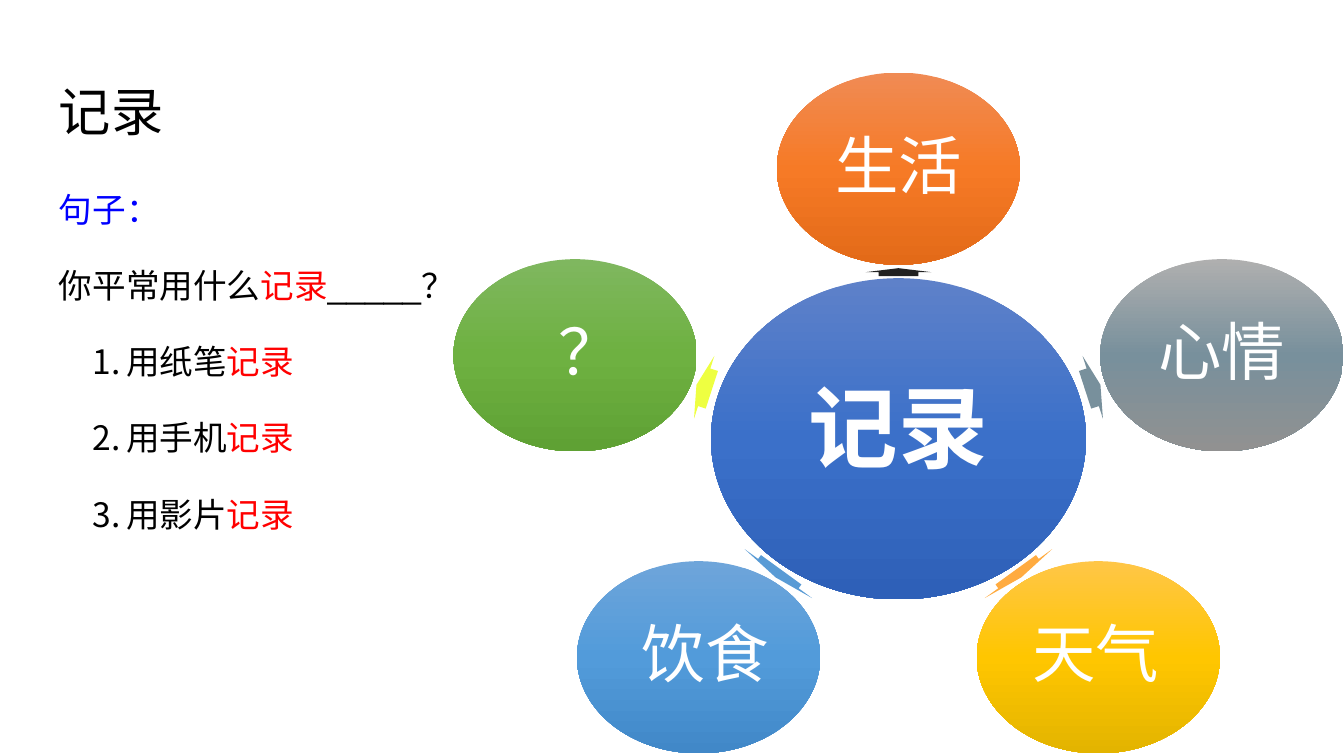
import math
import lxml.etree
import pptx
import pptx.dml.color
import pptx.enum.shapes
import pptx.enum.text
import pptx.oxml.ns
import pptx.util

Inches, Pt = pptx.util.Inches, pptx.util.Pt
SHAPE = pptx.enum.shapes.MSO_SHAPE
qn = pptx.oxml.ns.qn

BLACK, RED, BLUE, WHITE = "000000", "FF0000", "0000FF", "FFFFFF"
KEYWORD = "记录"
BUBBLE_W, BUBBLE_H = 1.81, 1.43
ORBIT_X, ORBIT_Y = 2.53, 2.01
ARROW_ORBIT_X, ARROW_ORBIT_Y = 1.52, 1.24

# Each line: numbered or not, then its coloured runs
SENTENCES = [
    (False, [("句子：", BLUE)]),
    (False, [("你平常用什么", BLACK), (KEYWORD, RED), ("_____？", BLACK)]),
] + [(True, [(way, BLACK), (KEYWORD, RED)]) for way in ("用纸笔", "用手机", "用影片")]

# Clockwise from the top: label, label shift, gradient, arrow colour, arrow size
TOPICS = [
    ("生活", 0, ("F08B54", "F67A26", "E36A18"), "212121", (0.06, 0.49)),
    ("心情", 0, ("AFAFAF", "78909C", "919191"), "78909C", (0.12, 0.49)),
    ("天气", -0.02, ("FFC647", "FFC600", "E3B400"), "FFAB40", (0.07, 0.62)),
    ("饮食", 0.05, ("6EA5DA", "529BDA", "4188C8"), "599BD5", (0.07, 0.62)),
    ("？", 0.11, ("7FB75F", "6EB141", "5FA134"), "EEFF41", (0.12, 0.49)),
]


def rgb(value):
    return pptx.dml.color.RGBColor.from_string(value)


def add_run(p, text, size, color, font="Arial", bold=False):
    r = p.add_run()
    r.text = text
    r.font.size, r.font.name, r.font.bold = Pt(size), font, bold
    r.font.color.rgb = rgb(color)


def add_text_frame(shapes, box, inset):
    tf = shapes.add_textbox(*map(Inches, box)).text_frame
    tf.word_wrap = True
    tf.margin_left = tf.margin_right = Inches(inset)
    tf.margin_top = tf.margin_bottom = Inches(inset)
    return tf


def centred(cx, cy, width, height):
    return cx - width / 2, cy - height / 2, width, height


def add_plain_shape(shapes, kind, box):
    sp = shapes.add_shape(kind, *map(Inches, box))
    sp.shadow.inherit = False
    sp.line.fill.background()
    return sp


def add_bubble(shapes, box, colors):
    sp = add_plain_shape(shapes, SHAPE.OVAL, box)
    sp.fill.gradient()
    sp.fill.gradient_angle = 270
    stops = sp.element.spPr.find(qn("a:gradFill")).find(qn("a:gsLst"))
    for stop in list(stops):
        stops.remove(stop)
    for i, color in enumerate(colors):
        stop = lxml.etree.SubElement(stops, qn("a:gs"), pos=str(i * 50000))
        lxml.etree.SubElement(stop, qn("a:srgbClr"), val=color)


def add_label(shapes, box, inset, text, size, font, bold=False):
    tf = add_text_frame(shapes, box, inset)
    tf.vertical_anchor = pptx.enum.text.MSO_ANCHOR.MIDDLE
    p = tf.paragraphs[0]
    p.alignment = pptx.enum.text.PP_ALIGN.CENTER
    p.line_spacing = 0.9
    add_run(p, text, size, WHITE, font, bold)


def number_paragraph(p):
    pPr = p._p.get_or_add_pPr()
    pPr.set("marL", str(Inches(0.5)))
    pPr.set("indent", str(Inches(-0.25)))
    color = lxml.etree.SubElement(pPr, qn("a:buClr"))
    lxml.etree.SubElement(color, qn("a:srgbClr"), val=BLACK)
    lxml.etree.SubElement(pPr, qn("a:buAutoNum"), type="arabicPeriod")


def add_title(slide, box):
    tf = add_text_frame(slide.shapes, box, 0.1)
    add_run(tf.paragraphs[0], KEYWORD, 28, BLACK)


def add_sentences(slide, box):
    tf = add_text_frame(slide.shapes, box, 0.1)
    for i, (numbered, runs) in enumerate(SENTENCES):
        p = tf.add_paragraph() if i else tf.paragraphs[0]
        p.line_spacing = 1.15
        p.space_after = Pt(16)
        if numbered:
            number_paragraph(p)
        for text, color in runs:
            add_run(p, text, 18, color)


def add_radial_diagram(slide, box):
    left, top, width, height = box
    shapes = slide.shapes.add_group_shape().shapes
    cx, cy = left + width / 2, top + BUBBLE_H / 2 + ORBIT_Y

    # Hub
    add_bubble(shapes, centred(cx, cy, 2.79, 2.39), ("5E81C9", "3B70C9", "2E60B8"))
    add_label(shapes, centred(cx, cy - 0.05, 2.28, 1.75), 0.07, KEYWORD, 48, "Arial", True)

    # Arrows and topics, evenly spaced around the hub
    for i, (text, shift, colors, arrow_color, arrow_size) in enumerate(TOPICS):
        angle = 270 + i * 360 / len(TOPICS)
        dx, dy = math.cos(math.radians(angle)), math.sin(math.radians(angle))

        arrow_x, arrow_y = cx + ARROW_ORBIT_X * dx, cy + ARROW_ORBIT_Y * dy
        arrow = add_plain_shape(shapes, SHAPE.RIGHT_ARROW,
                                centred(arrow_x, arrow_y, *arrow_size))
        arrow.adjustments[0], arrow.adjustments[1] = 0.6, 0.5
        arrow.rotation = angle % 360
        arrow.fill.solid()
        arrow.fill.fore_color.rgb = rgb(arrow_color)

        x, y = cx + ORBIT_X * dx, cy + ORBIT_Y * dy
        add_bubble(shapes, centred(x, y, BUBBLE_W, BUBBLE_H), colors)
        add_label(shapes, centred(x + shift, y, 1.28, 1.01), 0.05, text, 34, "Calibri")


def main():
    prs = pptx.Presentation()
    # Widescreen, 16:9
    prs.slide_width, prs.slide_height = Inches(10), Inches(10 * 9 / 16)
    slide = prs.slides.add_slide(prs.slide_layouts[6])
    add_title(slide, (0.34, 0.49, 9.32, 0.63))
    add_sentences(slide, (0.34, 1.26, 9.32, 3.74))
    add_radial_diagram(slide, (3.37, 0.54, 6.63, 5.06))
    prs.save("out.pptx")


if __name__ == "__main__":
    main()
